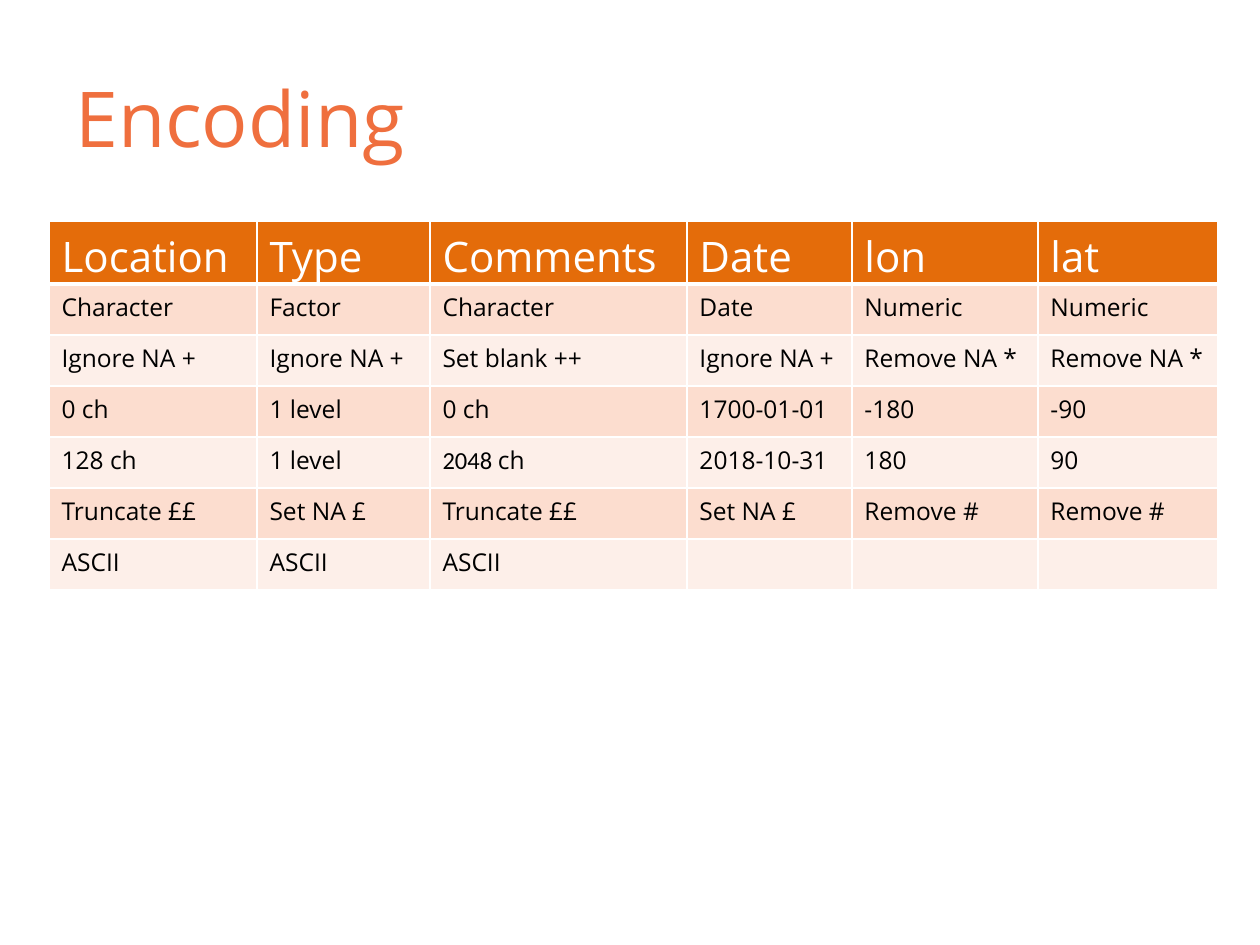
import pptx
import pptx.util
import pptx.dml.color
import pptx.enum.text
import pptx.oxml
import pptx.oxml.ns

EMU_PER_PX = 914400 // 126
FONT = "Open Sans"
NUMBER_FONT = "Calibri"
COLORS = {
    "title": "EF6F3E",
    "header": "E46C0A",
    "odd_row": "FCDDCF",
    "even_row": "FDEFE9",
    "white": "FFFFFF",
    "text": "000000",
}
COLUMN_WIDTHS = [208, 173, 257, 165, 186, 180]
ROW_HEIGHT = 51
THIN, THICK = 1, 3
ROWS = [
    ["Location", "Type", "Comments", "Date", "lon", "lat"],
    ["Character", "Factor", "Character", "Date", "Numeric", "Numeric"],
    ["Ignore NA +", "Ignore NA +", "Set blank ++", "Ignore NA +", "Remove NA *", "Remove NA *"],
    ["0 ch", "1 level", "0 ch", "1700-01-01", "-180", "-90"],
    ["128 ch", "1 level", "2048 ", "2018-10-31", "180", "90"],
    ["Truncate ££", "Set NA £", "Truncate ££", "Set NA £", "Remove #", "Remove #"],
    ["ASCII", "ASCII", "ASCII", "", "", ""],
]


def px(length):
    return pptx.util.Emu(length * EMU_PER_PX)


def rgb(name):
    return pptx.dml.color.RGBColor.from_string(COLORS[name])


def format_run(run, size, color, font=FONT):
    run.font.name = font
    run.font.size = pptx.util.Pt(size)
    run.font.color.rgb = rgb(color)


def add_title(slide, text):
    shape = slide.shapes.add_textbox(px(63), px(38), px(1134), px(157))
    frame = shape.text_frame
    frame.word_wrap = True
    frame.vertical_anchor = pptx.enum.text.MSO_ANCHOR.MIDDLE
    frame.text = text
    format_run(frame.paragraphs[0].runs[0], 44, "title")


def set_borders(cell, top, bottom):
    properties = cell._tc.get_or_add_tcPr()
    for side, width in (("L", THIN), ("R", THIN), ("T", top), ("B", bottom)):
        properties.append(pptx.oxml.parse_xml(
            f'<a:ln{side} {pptx.oxml.ns.nsdecls("a")} w="{pptx.util.Pt(width)}">'
            f'<a:solidFill><a:srgbClr val="{COLORS["white"]}"/></a:solidFill>'
            f'</a:ln{side}>'))


def fill_cell(cell, text, row_index):
    is_header = row_index == 0
    set_borders(cell, THICK if row_index == 1 else THIN, THICK if is_header else THIN)
    fill = "header" if is_header else "odd_row" if row_index % 2 else "even_row"
    cell.fill.solid()
    cell.fill.fore_color.rgb = rgb(fill)
    cell.text_frame.text = text
    for run in cell.text_frame.paragraphs[0].runs:
        format_run(run, 24 if is_header else 14, "white" if is_header else "text")


def add_encoding_table(slide):
    shape = slide.shapes.add_table(
        len(ROWS), len(COLUMN_WIDTHS), px(49), px(221),
        px(sum(COLUMN_WIDTHS)), px(ROW_HEIGHT * len(ROWS)))
    table = shape.table
    for column, width in zip(table.columns, COLUMN_WIDTHS):
        column.width = px(width)
    for row_index, texts in enumerate(ROWS):
        for column_index, text in enumerate(texts):
            fill_cell(table.cell(row_index, column_index), text, row_index)
    return table


def add_length_unit(cell, unit):
    paragraph = cell.text_frame.paragraphs[0]
    format_run(paragraph.runs[0], 14, "text", NUMBER_FONT)
    run = paragraph.add_run()
    run.text = unit
    format_run(run, 14, "text")


def main():
    presentation = pptx.Presentation()
    presentation.slide_width = pptx.util.Inches(10)
    presentation.slide_height = pptx.util.Inches(7.5)
    slide = presentation.slides.add_slide(presentation.slide_layouts[6])
    add_title(slide, "Encoding")
    table = add_encoding_table(slide)
    add_length_unit(table.cell(4, 2), "ch")
    presentation.save("out.pptx")


if __name__ == "__main__":
    main()
